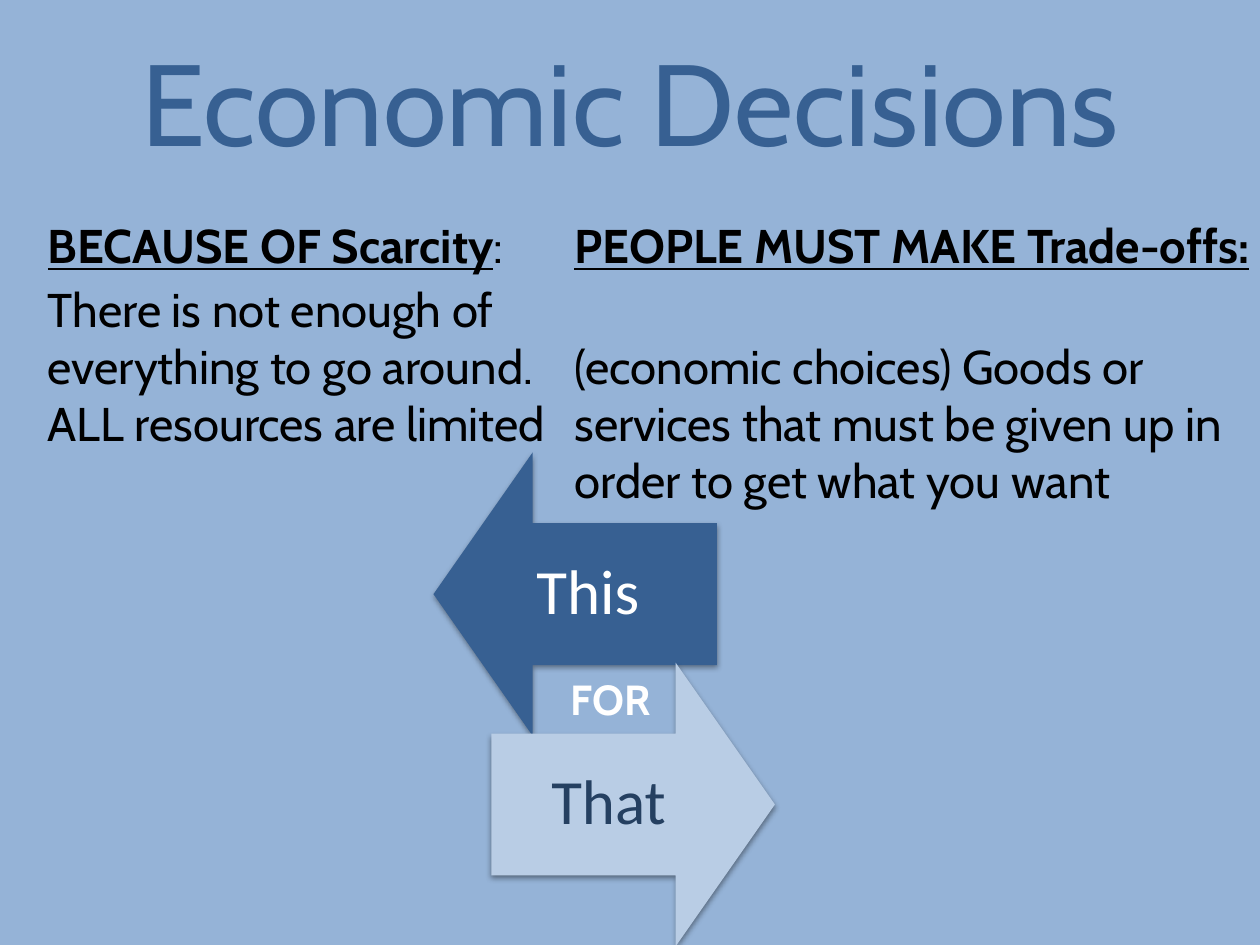
from lxml import etree
from pptx import Presentation
from pptx import util as u
from pptx.dml.color import RGBColor
from pptx.enum import shapes, text
from pptx.oxml.ns import qn

THEME = {
    "bg": "95B3D7", "dark": "376092", "light": "B9CDE5", "navy": "254061",
    "black": "000000", "white": "FFFFFF",
    "title": 66, "body": 27, "arrow": 36, "link": 24,
}


def color(name):
    return RGBColor.from_string(THEME[name])


def add_text(s, box, paras, size, ink, font="Cabin", insets=(0.1, 0.05, 0.1, 0.05),
             anchor=text.MSO_ANCHOR.TOP, **para_format):
    tf = s.shapes.add_textbox(*map(u.Inches, box)).text_frame
    tf.word_wrap = True
    tf.vertical_anchor = anchor
    for side, inset in zip(("left", "top", "right", "bottom"), insets):
        setattr(tf, f"margin_{side}", u.Inches(inset))
    for i, (before, runs) in enumerate(paras):
        p = tf.add_paragraph() if i else tf.paragraphs[0]
        for name, value in {"space_before": u.Pt(before), **para_format}.items():
            setattr(p, name, value)
        for words, style in runs:
            r = p.add_run()
            r.text = words
            r.font.color.rgb = color(ink)
            values = {"name": font, "size": u.Pt(THEME[size]), **style}
            for name, value in values.items():
                setattr(r.font, name, value)


prs = Presentation()
prs.slide_width, prs.slide_height = u.Inches(10), u.Inches(7.5)
s = prs.slides.add_slide(prs.slide_layouts[6])
s.background.fill.solid()
s.background.fill.fore_color.rgb = color("bg")

centered = {"anchor": text.MSO_ANCHOR.MIDDLE, "alignment": text.PP_ALIGN.CENTER}
heading = {"bold": True, "underline": True}

add_text(s, (0, 0.17, 10, 1.25), [(0, [("Economic Decisions", {})])],
         "title", "dark", **centered)

columns = [
    ((0.33, 1.67, 4.42, 5.12), 0.05, 4,
     [("BECAUSE OF Scarcity", heading), (":", {})],
     "There is not enough of everything to go around. ALL resources are limited"),
    ((4.56, 1.67, 5.44, 5.12), 0, 36.6,
     [("PEOPLE MUST MAKE Trade-offs:", heading)],
     "(economic choices) Goods or services that must be given up in order to get what you want"),
]
for box, side, gap, head, body in columns:
    add_text(s, box, [(4, head), (gap, [(body, {})])], "body", "black",
             insets=(side, 0.05, side, 0.05))

arrows = [
    ("This", 3.44, 3.59, 270, "dark", "white", 3.84, (0.2, 0.28, 0.41, 0.28)),
    ("That", 3.9, 5.26, 90, "light", "navy", 3.9, (0.28, 0.28, 0.28, 0.28)),
]
for label, left, top, turn, fill, ink, label_left, insets in arrows:
    sp = s.shapes.add_shape(shapes.MSO_SHAPE.UP_ARROW, u.Inches(left), u.Inches(top),
                            u.Inches(2.25), u.Inches(2.25))
    sp.rotation = turn
    sp.adjustments[0], sp.adjustments[1] = 0.5, 0.35
    sp.fill.solid()
    sp.fill.fore_color.rgb = color(fill)
    sp.line.fill.background()
    sp.shadow.inherit = False
    effects = sp.element.spPr.find(qn("a:effectLst"))
    shadow = etree.SubElement(effects, qn("a:outerShdw"), blurRad=str(u.Pt(3.1)),
                              dist=str(u.Pt(1.6)), dir="5400000", rotWithShape="0")
    shade = etree.SubElement(shadow, qn("a:srgbClr"), val=THEME["black"])
    etree.SubElement(shade, qn("a:alpha"), val="38000")
    add_text(s, (label_left, top + 0.56, 1.86, 1.13), [(0, [(label, {})])],
             "arrow", ink, "Calibri", insets, line_spacing=0.9, **centered)

add_text(s, (4.43, 5.3, 0.92, 0.5), [(0, [("FOR", {"bold": True})])], "link", "white")

prs.save("out.pptx")
